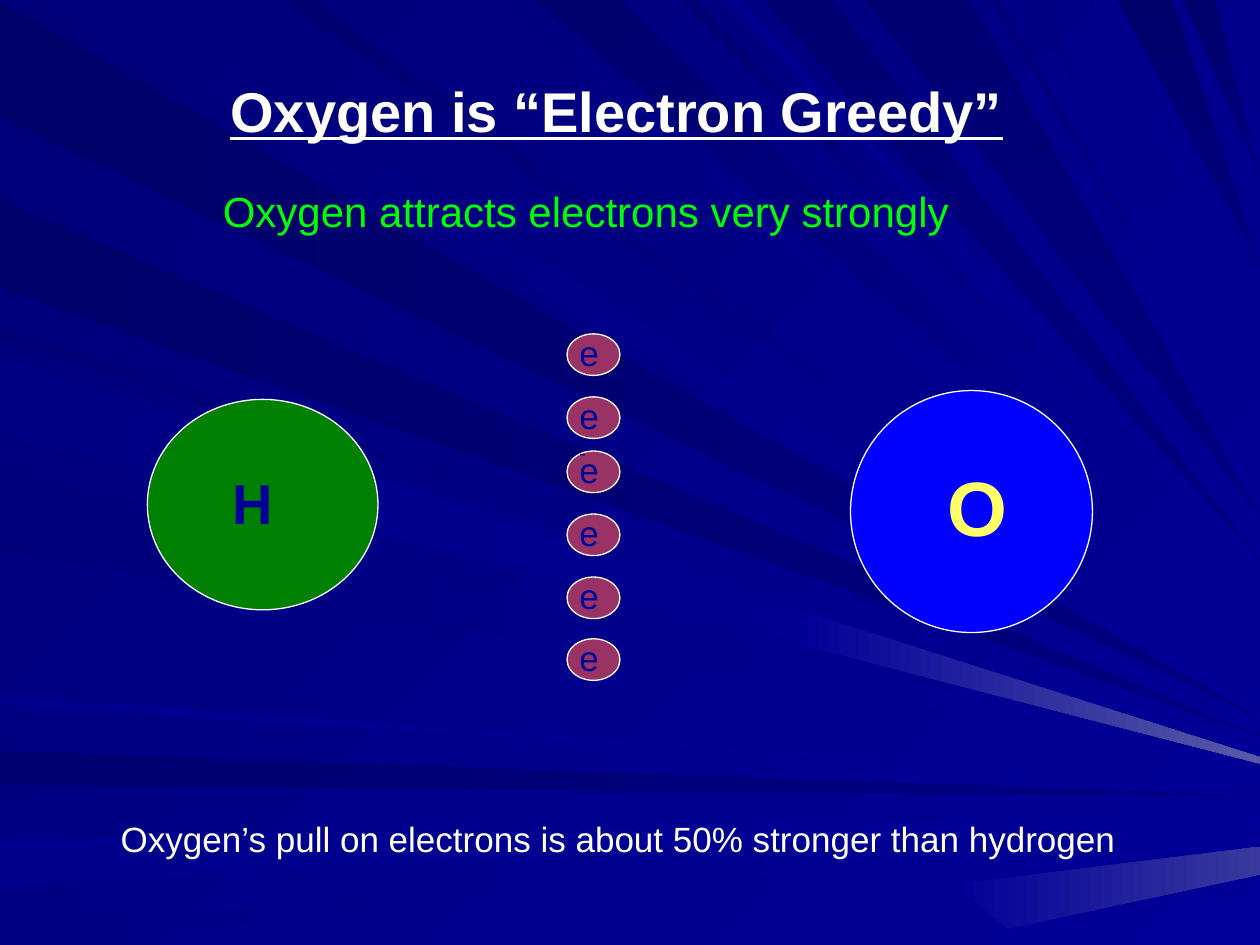
from dataclasses import dataclass

from pptx import Presentation
from pptx.dml.color import RGBColor
from pptx.enum.shapes import MSO_SHAPE
from pptx.enum.text import MSO_ANCHOR
from pptx.util import Inches, Pt


@dataclass(frozen=True)
class Theme:
    font: str = "Arial"
    white: str = "FFFFFF"
    navy: str = "000099"
    dark_navy: str = "000080"
    background: str = "000078"
    glow: str = "5A5AA6"
    faint_glow: str = "39399E"
    oxygen: str = "0000FF"
    oxygen_label: str = "FFFF66"
    hydrogen: str = "008000"
    electron: str = "993366"
    statement: str = "00FF00"
    symbol_size: int = 44
    title_size: int = 32
    statement_size: int = 24
    body_size: int = 20
    line_width: float = 0.75


theme = Theme()


def paint(fill, start, end, angle):
    """Fill with a clockwise gradient, or plainly when both ends agree."""
    if start == end:
        fill.solid()
        fill.fore_color.rgb = RGBColor.from_string(start)
        return
    fill.gradient()
    fill.gradient_angle = (360 - angle) % 360
    for stop, color in zip(fill.gradient_stops, (start, end)):
        stop.color.rgb = RGBColor.from_string(color)


def add_text(box, runs, size, color, bold=False, underline=False, wrap=True):
    """Write (text, baseline) runs in a text box at left, top, width, height."""
    frame = slide.shapes.add_textbox(*map(Inches, box)).text_frame
    frame.word_wrap = wrap
    for text, baseline in runs:
        run = frame.paragraphs[0].add_run()
        run.text = text
        font = run.font
        font.name, font.size = theme.font, Pt(size)
        font.bold, font.underline = bold, underline
        font.color.rgb = RGBColor.from_string(color)
        if baseline:
            run._r.get_or_add_rPr().set("baseline", str(baseline))
    return frame


presentation = Presentation()
presentation.slide_width, presentation.slide_height = Inches(10), Inches(7.5)
slide = presentation.slides.add_slide(presentation.slide_layouts[6])
paint(slide.background.fill, theme.background, theme.navy, 45)

# Rays narrow from the left or top edge towards a height on the right edge:
# blue of the dark end, first and last place on the edge, height reached
left_rays = [
    ("69", 0.02, 0.93, 5.7), ("71", 5.96, 6.23, 6.32), ("8C", 6.65, 7.04, 6.47),
    ("85", 7.35, 7.5, 6.62), ("76", 2.58, 2.7, 5.89), ("6B", 1.59, 2.28, 5.85),
    ("7E", 2.78, 3.42, 6), ("7B", 3.74, 4.37, 6.06), ("8E", 5.52, 5.6, 6.23),
    ("85", 2.83, 3.47, 6.04),
]
top_rays = [
    ("7B", 0.26, 1.01, 5.63), ("83", 3.98, 4.16, 5.18), ("6D", 4.26, 4.92, 4.93),
    ("73", 5.4, 5.52, 4.63), ("73", 6.06, 6.61, 4.45), ("6B", 8.87, 9.3, 2.1),
    ("6D", 9.39, 9.64, 1.4), ("70", 2.25, 2.47, 5.5), ("8E", 5.77, 5.88, 4.54),
    ("73", 6.86, 7.7, 4.1), ("78", 7.85, 7.92, 3.57), ("85", 8.15, 8.24, 3.36),
    ("8A", 8.65, 8.72, 2.53),
]
rays = []
for blue, first, last, height in left_rays:
    end = theme.dark_navy if blue < "75" else theme.navy
    rays.append(("0000" + blue, end, 0, [(0, first), (10, height), (0, last)]))
for blue, first, last, height in top_rays:
    wide = first > 6 and last - first > 0.2
    end, angle = (theme.dark_navy, 90) if wide else (theme.navy, 45)
    rays.append(("0000" + blue, end, angle, [(first, 0), (10, height), (last, 0)]))
rays += [
    (theme.navy, theme.glow, 0, [(6.37, 4.85), (10, 6.01), (10, 6.06), (6.33, 5.11)]),
    (theme.navy, theme.faint_glow, 0, [(7.56, 7.02), (10, 6.72), (10, 6.94), (8, 7.37)]),
]
for start, end, angle, corners in rays:
    points = [(Inches(x), Inches(y)) for x, y in corners]
    builder = slide.shapes.build_freeform(*points[0])
    builder.add_line_segments(points[1:], close=True)
    ray = builder.convert_to_shape()
    ray.shadow.inherit = False
    ray.line.fill.background()
    paint(ray.fill, start, end, angle)

# Title
add_text((1.73, 0.56, 6.93, 0.63), [("Oxygen is “Electron Greedy”", 0)],
         theme.title_size, theme.white, bold=True, underline=True)

# Atoms and the column of electrons between them
electron_tops = [2.65, 3.15, 3.58, 4.08, 4.58, 5.07]
circles = [((6.75, 3.1, 1.92, 1.92), theme.oxygen), ((1.17, 3.17, 1.83, 1.67), theme.hydrogen)]
circles += [((4.5, top, 0.42, 0.33), theme.electron) for top in electron_tops]
for box, color in circles:
    circle = slide.shapes.add_shape(MSO_SHAPE.OVAL, *map(Inches, box))
    circle.shadow.inherit = False
    paint(circle.fill, color, color, 0)
    circle.line.color.rgb = RGBColor.from_string(theme.white)
    circle.line.width = Pt(theme.line_width)

# Labels of the atoms and electrons
add_text((7.42, 3.6, 0.68, 0.83), [("O", 0)], theme.symbol_size, theme.oxygen_label, bold=True, wrap=False)
add_text((1.75, 3.67, 0.52, 0.63), [("H", 0)], theme.title_size, theme.navy, bold=True, wrap=False)
for top in electron_tops:
    add_text((4.5, top - 0.07, 0.25, 0.65), [("e", 0), ("-", 30000)], theme.body_size, theme.navy)

# Statements at the foot and below the title
add_text((0.86, 6.44, 8.44, 0.44), [("Oxygen’s pull on electrons is about 50% stronger than hydrogen", 0)],
         theme.body_size, theme.white)
statement = add_text((1.67, 1.42, 6.55, 0.5), [("Oxygen attracts electrons very strongly", 0)],
                     theme.statement_size, theme.statement)
statement.vertical_anchor = MSO_ANCHOR.MIDDLE

presentation.save("out.pptx")
